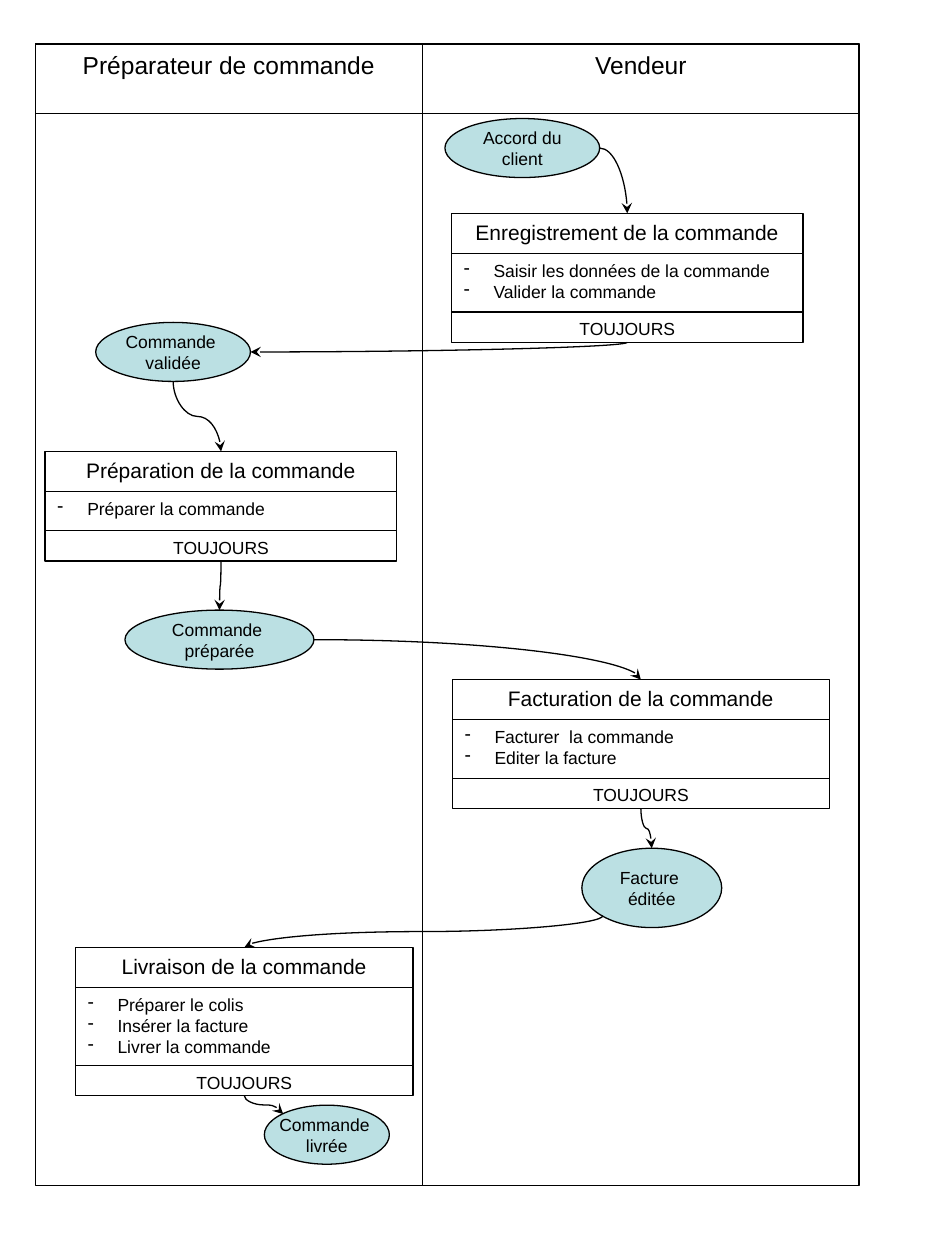
"""Build the two-lane order process diagram."""
from dataclasses import dataclass

from lxml import etree
from pptx import Presentation
from pptx import util as u
from pptx.dml.color import RGBColor
from pptx.enum import shapes, text
from pptx.oxml.ns import qn

COLORS = {"ink": "000000", "event": "BBE0E3"}
TITLE_HEIGHT, RESULT_HEIGHT = 0.81, 0.61
STEP_HEIGHT, STEP_MARGIN = 0.39, 0.4
LANE_TOP, LANE_HEIGHT, HEADER_HEIGHT = 0.89, 23.01, 1.4
SITES = {
    "top": (0.5, 0),
    "top left": (0.15, 0.15),
    "left": (0, 0.5),
    "bottom left": (0.15, 0.85),
    "bottom": (0.5, 1),
    "bottom right": (0.85, 0.85),
    "right": (1, 0.5),
}
OVAL_SITES = list(SITES)
RECT_SITES = ["top", "left", "bottom", "right"]


@dataclass
class Lane:
    """A vertical lane, in centimetres."""
    role: str
    left: float
    width: float


@dataclass
class Event:
    """An event oval, in centimetres."""
    key: str
    lines: list[str]
    left: float
    top: float
    width: float
    height: float = 1.19


@dataclass
class Operation:
    """An operation card with its steps, in centimetres."""
    key: str
    title: str
    steps: list[str]
    left: float
    top: float
    width: float


@dataclass
class Flow:
    """A curved arrow between two named sites."""
    start: str
    start_site: str
    end: str
    end_site: str
    bends: int


LANES = [
    Lane("Préparateur de commande", 0.71, 7.81),
    Lane("Vendeur", 8.52, 8.8),
]
EVENTS = [
    Event("accord", ["Accord du", "client"], 8.97, 2.39, 3.12),
    Event("validée", ["Commande ", "validée"], 1.93, 6.5, 3.12),
    Event("préparée", ["Commande ", "préparée"], 2.52, 12.3, 3.81),
    Event("éditée", ["Facture ", "éditée"], 11.73, 17.1, 2.82, 1.6),
    Event("livrée", ["Commande ", "livrée"], 5.33, 22.28, 2.52),
]
OPERATIONS = [
    Operation("enregistrement", "Enregistrement de la commande",
              ["Saisir les données de la commande", "Valider la commande"], 9.1, 4.3, 7.09),
    Operation("préparation", "Préparation de la commande",
              ["Préparer la commande"], 0.91, 9.1, 7.09),
    Operation("facturation", "Facturation de la commande",
              ["Facturer  la commande", "Editer la facture"], 9.12, 13.7, 7.6),
    Operation("livraison", "Livraison de la commande",
              ["Préparer le colis", "Insérer la facture", "Livrer la commande"], 1.52, 19.1, 6.81),
]
FLOWS = [
    Flow("accord", "right", "enregistrement", "top", 2),
    Flow("enregistrement", "bottom", "validée", "right", 2),
    Flow("validée", "bottom", "préparation", "top", 3),
    Flow("préparation", "bottom", "préparée", "top", 3),
    Flow("préparée", "right", "facturation", "top", 2),
    Flow("facturation", "bottom", "éditée", "top", 3),
    Flow("éditée", "bottom left", "livraison", "top", 3),
    Flow("livraison", "bottom", "livrée", "top left", 3),
]


def write_text(shape, lines: list[str], *, size: float = 10, dashed: bool = False,
               wrap: bool = True, middle: bool = False) -> None:
    """Fill a shape with formatted paragraphs."""
    frame = shape.text_frame
    frame.word_wrap = wrap
    frame.vertical_anchor = text.MSO_ANCHOR.MIDDLE if middle else text.MSO_ANCHOR.TOP
    for index, line in enumerate(lines):
        paragraph = frame.paragraphs[0] if index == 0 else frame.add_paragraph()
        paragraph.alignment = text.PP_ALIGN.LEFT if dashed else text.PP_ALIGN.CENTER
        if dashed:
            indent = u.Cm(0.6)
            properties = paragraph._p.get_or_add_pPr()
            properties.set("marL", str(indent))
            properties.set("indent", str(-indent))
            etree.SubElement(properties, qn("a:buChar"), char="-")
        run = paragraph.add_run()
        run.text = line
        run.font.name = "Arial"
        run.font.size = u.Pt(size)
        run.font.color.rgb = RGBColor.from_string(COLORS["ink"])


def draw_outline(slide, preset, left: float, top: float, width: float, height: float,
                 fill: str | None = None):
    """Draw a thinly outlined shape."""
    shape = slide.shapes.add_shape(preset, u.Cm(left), u.Cm(top), u.Cm(width), u.Cm(height))
    shape.shadow.inherit = False
    shape.line.color.rgb = RGBColor.from_string(COLORS["ink"])
    shape.line.width = u.Pt(0.75)
    if fill:
        shape.fill.solid()
        shape.fill.fore_color.rgb = RGBColor.from_string(COLORS[fill])
    else:
        shape.fill.background()
    return shape


def draw_lane(slide, lane: Lane) -> None:
    """Draw a lane and its header."""
    rect = shapes.MSO_SHAPE.RECTANGLE
    draw_outline(slide, rect, lane.left, LANE_TOP, lane.width, LANE_HEIGHT)
    header = draw_outline(slide, rect, lane.left, LANE_TOP, lane.width, HEADER_HEIGHT)
    write_text(header, [lane.role], size=14)


def draw_event(slide, event: Event):
    """Draw an event oval."""
    oval = draw_outline(slide, shapes.MSO_SHAPE.OVAL, event.left, event.top,
                        event.width, event.height, "event")
    write_text(oval, event.lines, wrap=False, middle=True)
    return oval


def draw_operation(slide, operation: Operation) -> dict:
    """Draw the stacked parts of an operation and return its outer ones by site."""
    parts = []
    top = operation.top
    for lines, height, style in (
        ([operation.title], TITLE_HEIGHT, {"size": 12}),
        (operation.steps, STEP_MARGIN + STEP_HEIGHT * len(operation.steps), {"dashed": True}),
        (["TOUJOURS"], RESULT_HEIGHT, {}),
    ):
        part = draw_outline(slide, shapes.MSO_SHAPE.RECTANGLE, operation.left, top,
                            operation.width, height)
        write_text(part, lines, **style)
        parts.append(part)
        top += height
    return {"top": parts[0], "bottom": parts[-1]}


def locate(shape, site: str) -> tuple[int, int]:
    """Return the position of a site on a shape."""
    across, down = SITES[site]
    return int(shape.left + across * shape.width), int(shape.top + down * shape.height)


def site_index(shape, site: str) -> int:
    """Return the connection number of a site."""
    is_oval = shape.auto_shape_type == shapes.MSO_SHAPE.OVAL
    return (OVAL_SITES if is_oval else RECT_SITES).index(site)


def draw_flow(slide, flow: Flow, start, end) -> None:
    """Draw a joined, curved arrow that leaves sideways or downwards."""
    (x1, y1), (x2, y2) = locate(start, flow.start_site), locate(end, flow.end_site)
    arrow = slide.shapes.add_connector(shapes.MSO_CONNECTOR.CURVE, x1, y1, x2, y2)
    arrow.begin_connect(start, 0)
    arrow.end_connect(end, 0)
    joints = arrow._element.nvCxnSpPr.cNvCxnSpPr
    joints.stCxn.set("idx", str(site_index(start, flow.start_site)))
    joints.endCxn.set("idx", str(site_index(end, flow.end_site)))

    properties = arrow._element.spPr
    properties.find(qn("a:prstGeom")).set("prst", f"curvedConnector{flow.bends}")
    frame = properties.find(qn("a:xfrm"))
    frame.attrib.clear()
    width, height = abs(x2 - x1), abs(y2 - y1)
    if flow.start_site != "right":
        width, height = height, width
        frame.set("rot", str((90 if x2 < x1 else 270) * 60000))
        if x2 >= x1:
            frame.set("flipH", "1")
    arrow.left, arrow.top = (x1 + x2 - width) // 2, (y1 + y2 - height) // 2
    arrow.width, arrow.height = width, height

    arrow.line.color.rgb = RGBColor.from_string(COLORS["ink"])
    arrow.line.width = u.Pt(0.75)
    etree.SubElement(arrow.line._get_or_add_ln(), qn("a:tailEnd"), type="stealth")
    etree.SubElement(properties, qn("a:effectLst"))


def main() -> None:
    """Assemble and save the diagram."""
    deck = Presentation()
    deck.slide_width, deck.slide_height = u.Cm(19.05), u.Cm(25.4)
    slide = deck.slides.add_slide(deck.slide_layouts[6])
    for lane in LANES:
        draw_lane(slide, lane)
    nodes = {event.key: dict.fromkeys(SITES, draw_event(slide, event)) for event in EVENTS}
    nodes |= {operation.key: draw_operation(slide, operation) for operation in OPERATIONS}
    for flow in FLOWS:
        draw_flow(slide, flow, nodes[flow.start][flow.start_site], nodes[flow.end][flow.end_site])
    deck.save("out.pptx")


if __name__ == "__main__":
    main()
